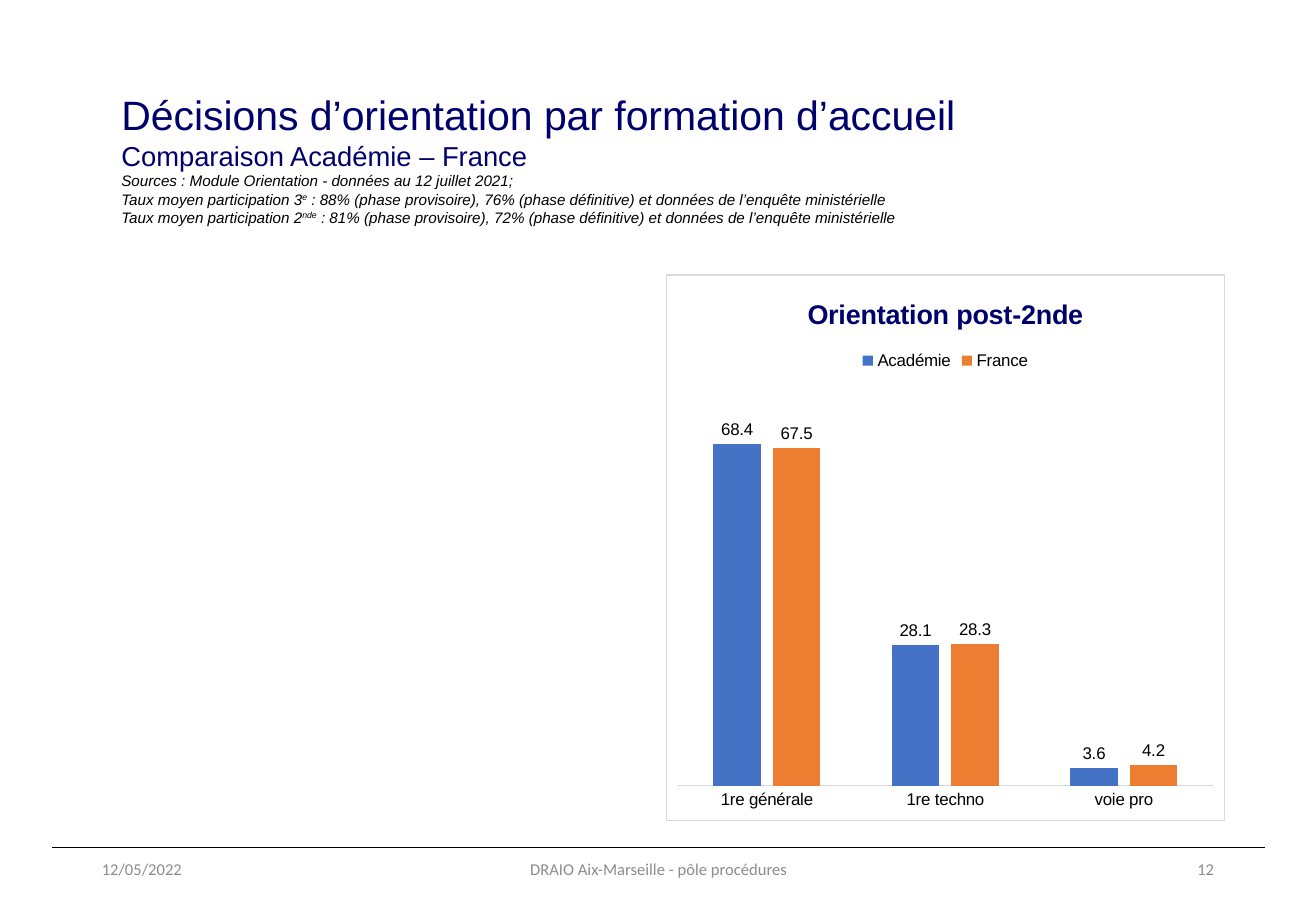
"""Build the slide comparing orientation decisions in the Académie and in France."""
from lxml import etree
from pptx import Presentation, oxml, util as u
from pptx.chart import data as chart_data
from pptx.dml import color
from pptx.enum import chart as ch, shapes, text
from pptx.oxml import ns

COLORS = {"navy": "00006D", "black": "000000", "white": "FFFFFF", "footer": "8C8C8C",
          "frame": "D9D9D9", "Académie": "4472C4", "France": "ED7D31"}
WIDTH, HEIGHT = u.Inches(10.83), u.Inches(7.5)
SURVEY = "(phase définitive) et données de l’enquête ministérielle"
HEADING = [
    (24.3, "navy", False, [("Décisions d’orientation par formation d’accueil", False)]),
    (16.2, "navy", False, [("Comparaison Académie – France", False)]),
    (9, "black", True, [("Sources : Module Orientation - données au 12 juillet 2021;", False)]),
    (9, "black", True, [("Taux moyen participation 3", False), ("e", True),
                        (f" : 88% (phase provisoire), 76% {SURVEY}", False)]),
    (9, "black", True, [("Taux moyen participation 2", False), ("nde", True),
                        (f" : 81% (phase provisoire), 72% {SURVEY}", False)]),
]
FOOTER = [("12/05/2022", 6.83, 22.53, text.PP_ALIGN.LEFT),
          ("DRAIO Aix-Marseille - pôle procédures", 33.15, 33.8, text.PP_ALIGN.CENTER),
          ("12", 70.64, 22.53, text.PP_ALIGN.RIGHT)]
LEVELS = ["1re générale", "1re techno", "voie pro"]
RATES = {"Académie": (68.4, 28.1, 3.6), "France": (67.5, 28.3, 4.2)}


def place(left, top, *size):
    """Turn percentages of the slide into lengths, alternating across and down."""
    return [int(share * (HEIGHT if i % 2 else WIDTH) / 100)
            for i, share in enumerate((left, top, *size))]


def rgb(name):
    """Give the named colour."""
    return color.RGBColor.from_string(COLORS[name])


def set_font(font, face, size, name, bold=False, italic=False):
    """Set face, size, colour and style of a font."""
    font.name, font.size, font.bold, font.italic = face, u.Pt(size), bold, italic
    font.color.rgb = rgb(name)


def add_text(page, area, lines, face, align=text.PP_ALIGN.LEFT):
    """Add a middle-anchored box with one paragraph per line of spans."""
    frame = page.shapes.add_textbox(*place(*area)).text_frame
    frame.word_wrap = True
    frame.vertical_anchor = text.MSO_ANCHOR.MIDDLE
    for i, (size, name, italic, spans) in enumerate(lines):
        para = frame.add_paragraph() if i else frame.paragraphs[0]
        para.alignment = align
        for words, raised in spans:
            span = para.add_run()
            span.text = words
            set_font(span.font, face, size, name, italic=italic)
            if raised:
                span.font._element.set("baseline", "30000")


def add_rule(page):
    """Draw the line above the footer."""
    rule = page.shapes.add_connector(shapes.MSO_CONNECTOR.STRAIGHT,
                                     *place(3.97, 93.07, 96.12, 93.07))
    rule.line.color.rgb = rgb("black")
    rule.line.width = u.Pt(0.8)
    etree.SubElement(rule._element.spPr, ns.qn("a:effectLst"))


def frame_chart(chart):
    """Give the chart area a white fill and a thin grey border."""
    chart.element.chart.addnext(oxml.parse_xml(
        f'<c:spPr {ns.nsdecls("c", "a")}>'
        f'<a:solidFill><a:srgbClr val="{COLORS["white"]}"/></a:solidFill>'
        f'<a:ln w="9525"><a:solidFill><a:srgbClr val="{COLORS["frame"]}"/></a:solidFill></a:ln>'
        '</c:spPr>'))


def add_rates_chart(page):
    """Add the clustered columns of orientation rates."""
    rates = chart_data.CategoryChartData(number_format="0.0")
    rates.categories = LEVELS
    for name, values in RATES.items():
        rates.add_series(name, values)
    chart = page.shapes.add_chart(ch.XL_CHART_TYPE.COLUMN_CLUSTERED,
                                  *place(50.6, 30.13, 42.47, 60), rates).chart
    set_font(chart.font, "Arial", 10, "black")
    frame_chart(chart)

    title = chart.chart_title.text_frame.paragraphs[0].add_run()
    title.text = "Orientation post-2nde"
    set_font(title.font, "Arial", 16, "navy", bold=True)
    chart.has_legend = True
    chart.legend.position = ch.XL_LEGEND_POSITION.TOP
    chart.legend.include_in_layout = False

    chart.value_axis.visible = False
    chart.value_axis.has_major_gridlines = False
    chart.value_axis.minimum_scale, chart.value_axis.maximum_scale = 0, 80
    levels = chart.category_axis
    levels.major_tick_mark = ch.XL_TICK_MARK.NONE
    levels.format.line.color.rgb = rgb("frame")
    levels.format.line.width = u.Pt(0.75)

    plot = chart.plots[0]
    plot.gap_width, plot.overlap, plot.vary_by_categories = 150, -25, False
    for series in plot.series:
        series.format.fill.solid()
        series.format.fill.fore_color.rgb = rgb(series.name)
        labels = series.data_labels
        labels.show_value = True
        labels.number_format, labels.number_format_is_linked = "0.0", False
        labels.position = ch.XL_LABEL_POSITION.OUTSIDE_END


def main():
    """Build and save the deck."""
    deck = Presentation()
    deck.slide_width, deck.slide_height = WIDTH, HEIGHT
    page = deck.slides.add_slide(deck.slide_layouts[6])
    add_rule(page)
    add_text(page, (8.31, 9.07, 81.9, 16.53), HEADING, "Arial")
    for words, left, width, align in FOOTER:
        add_text(page, (left, 92.67, width, 5.33),
                 [(9.8, "footer", False, [(words, False)])], "Calibri", align)
    add_rates_chart(page)
    deck.save("out.pptx")


if __name__ == "__main__":
    main()
